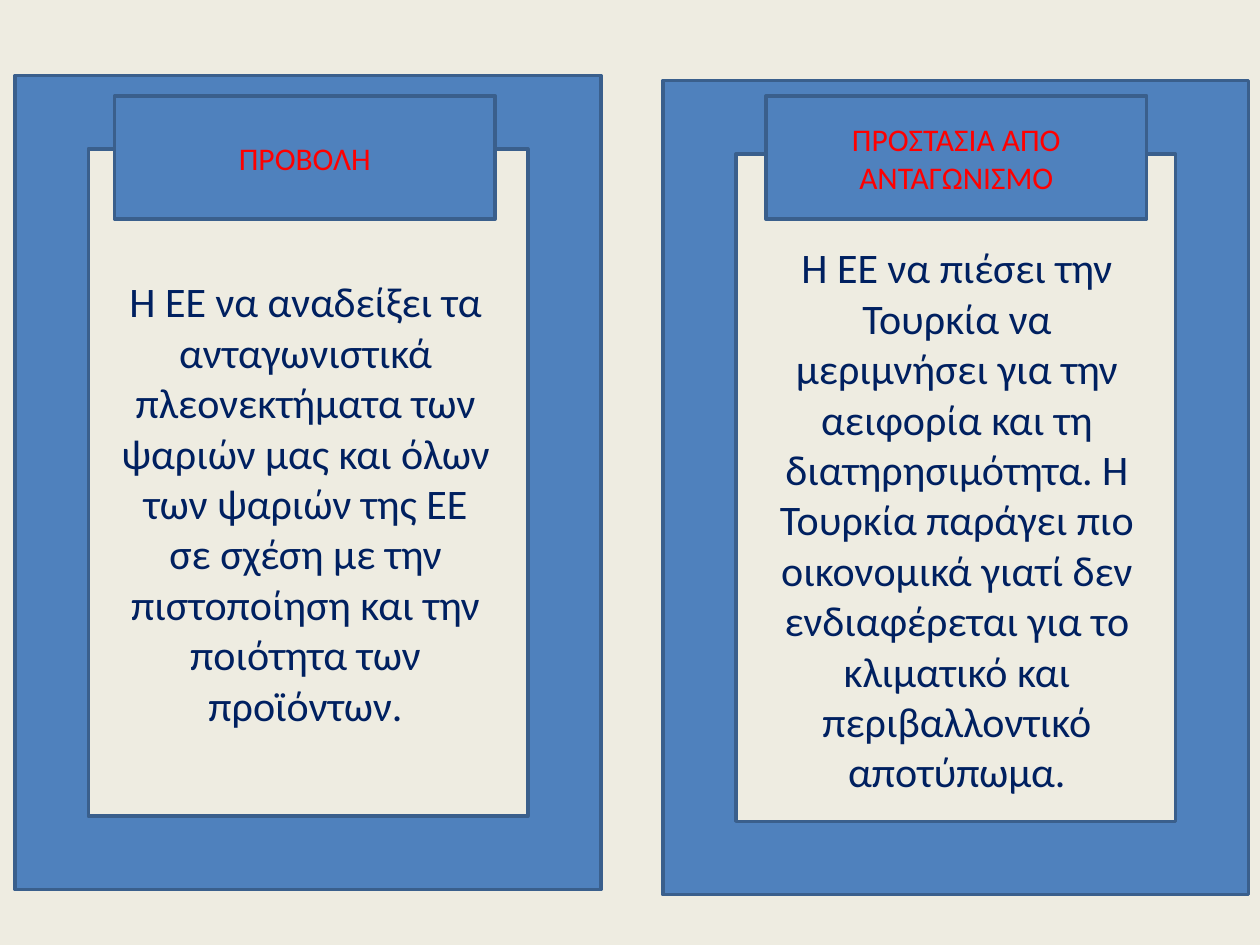
from pptx import Presentation
from pptx.dml.color import RGBColor
from pptx.enum.shapes import MSO_SHAPE as Shape
from pptx.enum.text import MSO_ANCHOR as Anchor, MSO_AUTO_SIZE as Fit, PP_ALIGN as Align
from pptx.util import Inches, Pt


def paint(color, hue):
    color.rgb = RGBColor.from_string(hue)


def write(box, text, size, hue):
    frame = box.text_frame
    frame.word_wrap = True
    frame.text = text
    para = frame.paragraphs[0]
    para.alignment = Align.CENTER
    font = para.runs[0].font
    font.name, font.size = "Calibri", Pt(size)
    paint(font.color, hue)
    return frame


deck = Presentation()
deck.slide_width, deck.slide_height = Inches(10), Inches(7.5)
slide = deck.slides.add_slide(deck.slide_layouts[6])
back = slide.background.fill
back.solid()
paint(back.fore_color, "EEECE1")

# Each column: frame left and top, heading left, body box, heading, body
cols = [
    (0.12, 0.6, 0.91, (0.85, 2.14, 3.15, 3.74), "ΠΡΟΒΟΛΗ",
     "Η ΕΕ να αναδείξει τα ανταγωνιστικά πλεονεκτήματα των ψαριών μας "
     "και όλων των ψαριών της ΕΕ σε σχέση με την πιστοποίηση και την "
     "ποιότητα των προϊόντων."),
    (5.26, 0.64, 6.08, (5.98, 1.87, 3.23, 4.95), "ΠΡΟΣΤΑΣΙΑ ΑΠΟ ΑΝΤΑΓΩΝΙΣΜΟ",
     "Η ΕΕ να πιέσει την Τουρκία να μεριμνήσει για την αειφορία και τη "
     "διατηρησιμότητα. Η Τουρκία παράγει πιο οικονομικά γιατί δεν "
     "ενδιαφέρεται για το κλιματικό και περιβαλλοντικό αποτύπωμα."),
]

for left, top, inset, area, head, body in cols:
    panels = []
    for kind, place in (
        (Shape.FRAME, (left, top, 4.65, 6.46)),
        (Shape.RECTANGLE, (inset, 0.76, 3.02, 0.98)),
    ):
        panel = slide.shapes.add_shape(kind, *map(Inches, place))
        panel.shadow.inherit = False
        panel.fill.solid()
        paint(panel.fill.fore_color, "4F81BD")
        paint(panel.line.color, "3A5F8C")
        panel.line.width = Pt(2)
        panels.append(panel)
    write(panels[1], head, 18, "FF0000").vertical_anchor = Anchor.MIDDLE

    note = slide.shapes.add_textbox(*map(Inches, area))
    write(note, body, 24, "002060").auto_size = Fit.SHAPE_TO_FIT_TEXT

deck.save("out.pptx")
